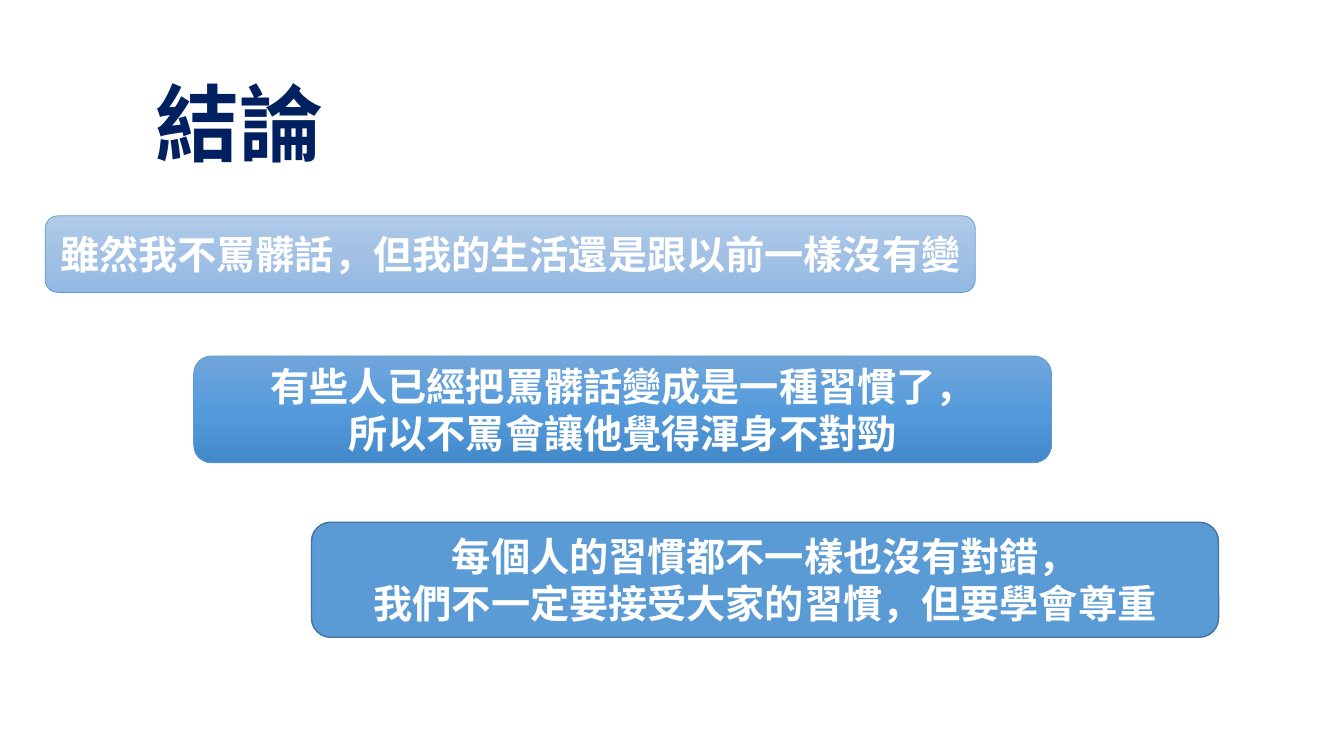
"""Build the conclusion slide with its title and three stepped banners."""
from copy import deepcopy
from dataclasses import dataclass

from lxml.etree import SubElement
from pptx import Presentation
from pptx.dml.color import RGBColor
from pptx.enum.shapes import MSO_SHAPE
from pptx.enum.text import MSO_ANCHOR, PP_ALIGN
from pptx.oxml.ns import qn
from pptx.shapes.autoshape import Shape
from pptx.slide import Slide
from pptx.text.text import TextFrame
from pptx.util import Cm, Pt

FACE = "Noto Sans CJK SC"
COLORS = {
    "title": "002060",
    "text": "FFFFFF",
    "blue": "5B9BD5",
    "edge": "43739E",
}


@dataclass
class Banner:
    """A rounded box in centimetres with its fill stops and lines of text."""

    left: float
    top: float
    width: float
    height: float
    stops: list[str]
    edge: str
    weight: float
    lines: list[str]


BANNERS = [
    Banner(1.14, 5.44, 23.44, 1.93, ["B1CBE9", "A3C1E5", "93B9E4"], "blue", 0.5,
           ["雖然我不罵髒話，但我的生活還是跟以前一樣沒有變"]),
    Banner(4.88, 8.97, 21.62, 2.69, ["71A6DB", "559BDB", "448ACA"], "blue", 0.5,
           ["有些人已經把罵髒話變成是一種習慣了，", "所以不罵會讓他覺得渾身不對勁"]),
    Banner(7.85, 13.16, 22.86, 2.9, [COLORS["blue"]], "edge", 1,
           ["每個人的習慣都不一樣也沒有對錯，", "我們不一定要接受大家的習慣，但要學會尊重"]),
]


def write(frame: TextFrame, lines: list[str], size: float, color: str, align: PP_ALIGN) -> None:
    """Fill a frame with bold paragraphs."""
    frame.word_wrap = True
    frame.text = "\n".join(lines)
    for para in frame.paragraphs:
        para.alignment = align
        font = para.font
        font.name, font.size, font.bold = FACE, Pt(size), True
        font.color.rgb = RGBColor.from_string(COLORS[color])
        props = para._p.pPr.find(qn("a:defRPr"))
        SubElement(props, qn("a:ea")).set("typeface", FACE)


def paint(shape: Shape, stops: list[str]) -> None:
    """Give a shape a solid fill or an even gradient from top to bottom."""
    fill = shape.fill
    if len(stops) == 1:
        fill.solid()
        fill.fore_color.rgb = RGBColor.from_string(stops[0])
        return
    fill.gradient()
    fill.gradient_angle = 270
    group = next(shape.element.spPr.iter(qn("a:gsLst")))
    while len(group) < len(stops):
        group.append(deepcopy(group[-1]))
    for step, (stop, color) in enumerate(zip(fill.gradient_stops, stops)):
        stop.position = step / (len(stops) - 1)
        stop.color.rgb = RGBColor.from_string(color)


def draw(slide: Slide, item: Banner) -> None:
    """Draw one banner."""
    shape = slide.shapes.add_shape(
        MSO_SHAPE.ROUNDED_RECTANGLE,
        Cm(item.left), Cm(item.top), Cm(item.width), Cm(item.height))
    shape.shadow.inherit = False
    paint(shape, item.stops)
    shape.line.color.rgb = RGBColor.from_string(COLORS[item.edge])
    shape.line.width = Pt(item.weight)
    frame = shape.text_frame
    frame.margin_left = frame.margin_right = Cm(0.1)
    frame.vertical_anchor = MSO_ANCHOR.MIDDLE
    write(frame, item.lines, 28, "text", PP_ALIGN.CENTER)


def main() -> None:
    """Build and save the slide."""
    deck = Presentation()
    deck.slide_width, deck.slide_height = Cm(33.87), Cm(19.05)
    slide = deck.slides.add_slide(deck.slide_layouts[6])
    title = slide.shapes.add_textbox(Cm(3.68), Cm(1.68), Cm(6.78), Cm(2.82))
    write(title.text_frame, ["結論"], 60, "title", PP_ALIGN.LEFT)
    for item in BANNERS:
        draw(slide, item)
    deck.save("out.pptx")


if __name__ == "__main__":
    main()
